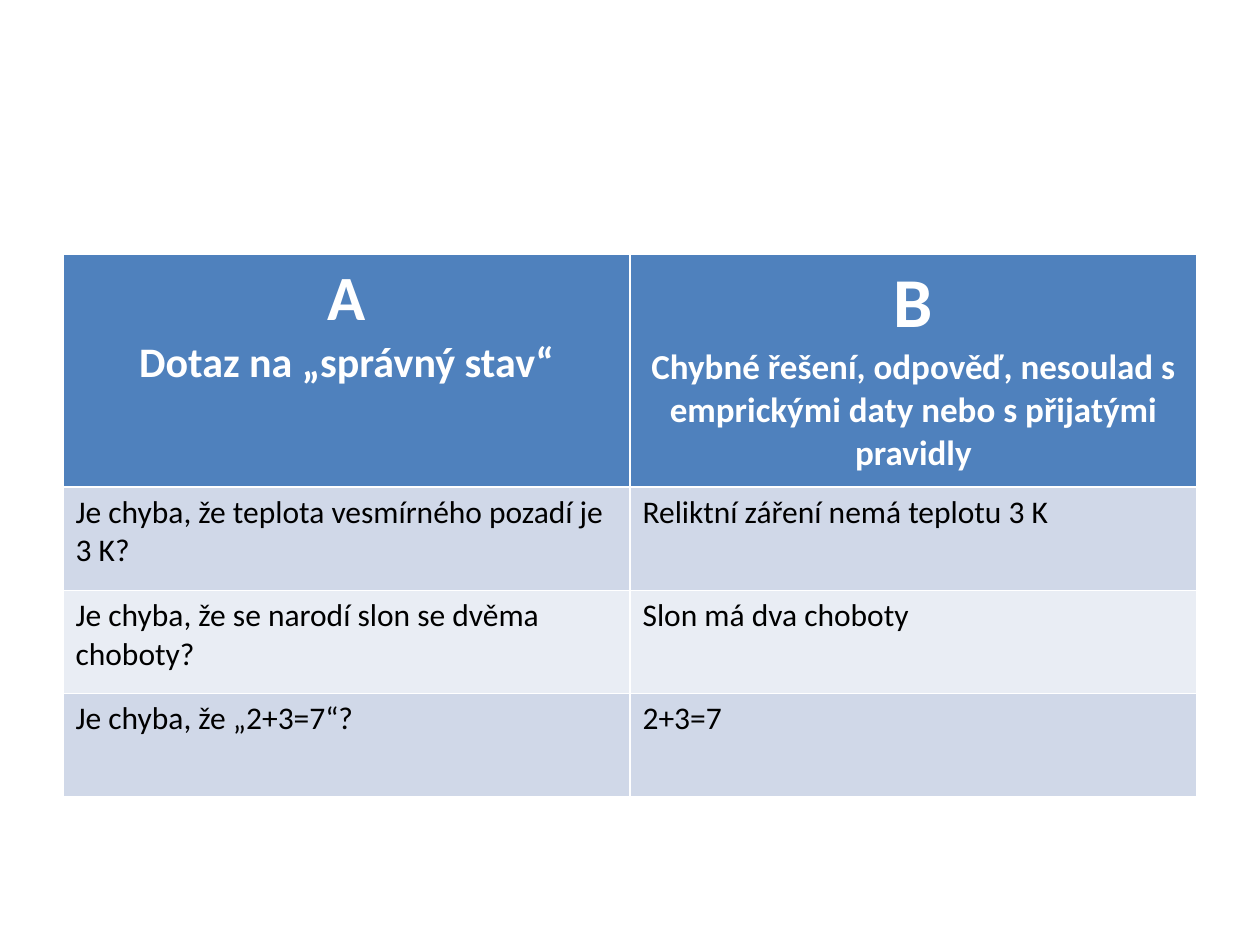
from pptx import Presentation
from pptx.dml.color import RGBColor as RGB
from pptx.enum.text import PP_ALIGN as Align
from pptx.util import Cm, Pt

WHITE = RGB(0xFF, 0xFF, 0xFF)
BLACK = RGB(0, 0, 0)
BLUE = RGB(0x4F, 0x81, 0xBD)
BANDS = (RGB(0xD0, 0xD8, 0xE8), RGB(0xE9, 0xED, 0xF4))

HEADS = (
    (("A", 36), ("Dotaz na „správný stav“", 24)),
    (("B", 40), ("Chybné řešení, odpověď, nesoulad s emprickými daty "
                 "nebo s přijatými pravidly", 20)),
)
ROWS = (
    ("Je chyba, že teplota vesmírného pozadí je 3 K?",
     "Reliktní záření nemá teplotu 3 K"),
    ("Je chyba, že se narodí slon se dvěma choboty?", "Slon má dva choboty"),
    ("Je chyba, že „2+3=7“?", "2+3=7"),
)


def write(para, text, size=18, color=BLACK, bold=False, align=Align.LEFT):
    """Put formatted text into a paragraph."""
    para.alignment = align
    run = para.add_run()
    run.text = text
    font = run.font
    font.name, font.size, font.bold = "Calibri", Pt(size), bold
    font.color.rgb = color


def paint(cell, color):
    """Fill a cell with a plain colour."""
    cell.fill.solid()
    cell.fill.fore_color.rgb = color


def add_head(cell, lines):
    """Fill a header cell with its letter and its caption."""
    paint(cell, BLUE)
    frame = cell.text_frame
    for i, (text, size) in enumerate(lines):
        para = frame.add_paragraph() if i else frame.paragraphs[0]
        write(para, text, size=size, color=WHITE, bold=True, align=Align.CENTER)


def add_grid(slide):
    """Add the table that compares questions with errors."""
    grid = slide.shapes.add_table(
        len(ROWS) + 1, len(HEADS), Cm(1.27), Cm(5.13), Cm(22.86), Cm(10.93)).table
    grid.rows[0].height = Cm(4.69)
    for c, lines in enumerate(HEADS):
        add_head(grid.cell(0, c), lines)
    for r, texts in enumerate(ROWS):
        grid.rows[r + 1].height = Cm(2.08)
        for c, text in enumerate(texts):
            cell = grid.cell(r + 1, c)
            paint(cell, BANDS[r % 2])
            write(cell.text_frame.paragraphs[0], text)


def main():
    """Build the slide and save it."""
    deck = Presentation()
    deck.slide_width, deck.slide_height = Cm(25.4), Cm(19.05)
    add_grid(deck.slides.add_slide(deck.slide_layouts[6]))
    deck.save("out.pptx")


if __name__ == "__main__":
    main()
